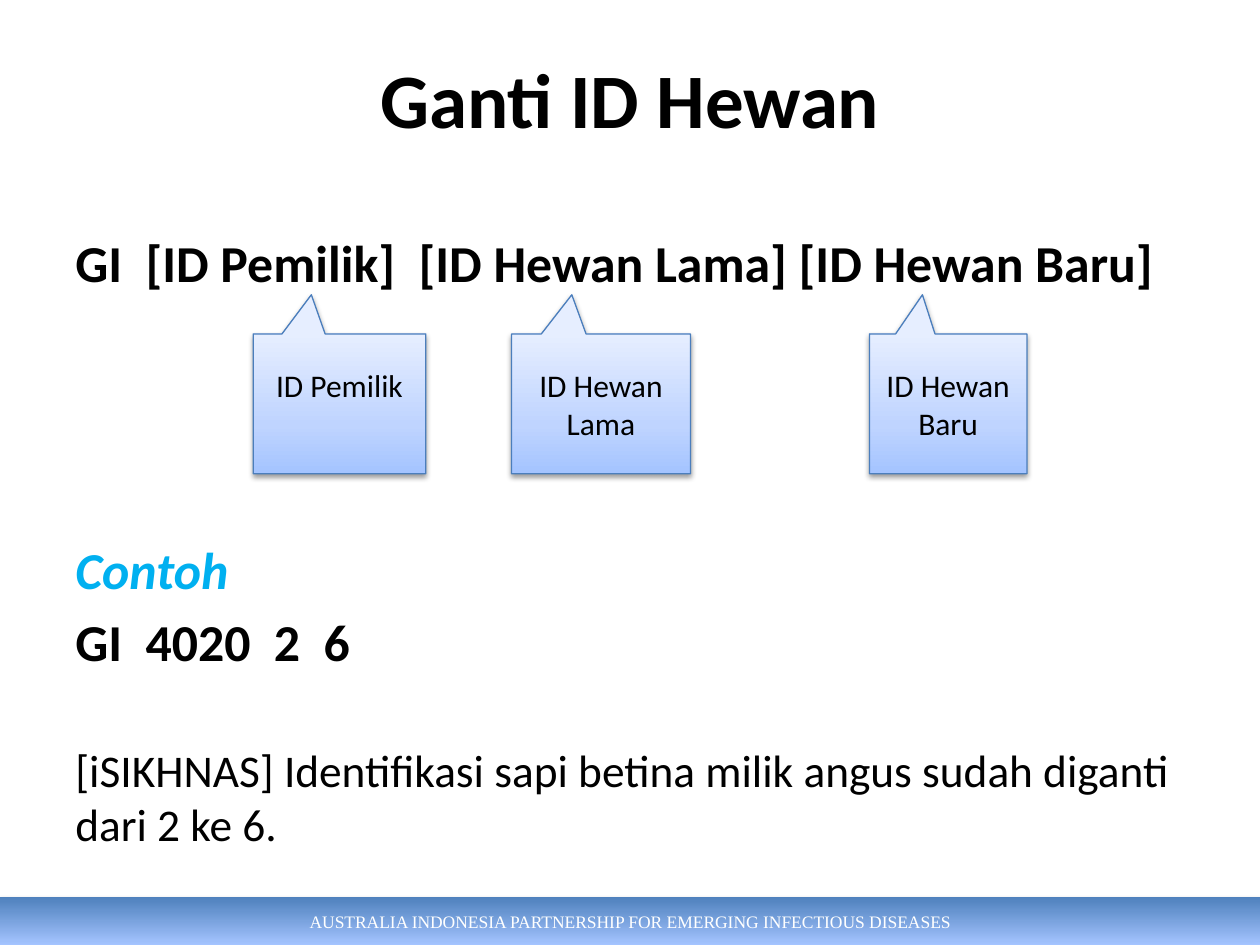
from lxml.etree import SubElement
from pptx import Presentation
from pptx.dml.color import RGBColor
from pptx.enum.shapes import MSO_SHAPE
from pptx.enum.text import MSO_ANCHOR, PP_ALIGN
from pptx.oxml.ns import qn
from pptx.util import Inches, Pt

BLACK = RGBColor(0x00, 0x00, 0x00)
WHITE = RGBColor(0xFF, 0xFF, 0xFF)
CYAN = RGBColor(0x00, 0xB0, 0xF0)
BLUE = RGBColor(0x4F, 0x81, 0xBD)
OUTLINE = RGBColor(0x4B, 0x7E, 0xBC)
LIGHT_BLUE = RGBColor(0xA4, 0xC4, 0xFF)
PALE_BLUE = RGBColor(0xBF, 0xD4, 0xFF)
ICE_BLUE = RGBColor(0xE6, 0xEE, 0xFF)

WIDTH, HEIGHT = 10, 7.5
MARGIN = 0.05 * WIDTH
CONTENT_WIDTH = WIDTH - 2 * MARGIN
FOOTER_HEIGHT = 0.38
CALLOUT_TOP, CALLOUT_HEIGHT = 2.65, 1.11
LINE_OF_LABEL = 0.3

# Label, left, width, lines left free below the label
CALLOUTS = [
    ("ID Pemilik", 2.01, 1.37, 1),
    ("ID Hewan Lama", 4.06, 1.42, 0),
    ("ID Hewan Baru", 6.9, 1.25, 0),
]

# Text, size, colour, bold, italic, space before in points
BODY = [
    ("GI  [ID Pemilik]  [ID Hewan Lama] [ID Hewan Baru]", 29.6, BLACK, True, False, 0),
    ("Contoh", 29.6, CYAN, True, True, 140),
    ("GI  4020  2  6", 29.6, BLACK, True, False, 5.8),
    ("[iSIKHNAS] Identifikasi sapi betina milik angus sudah diganti dari 2 ke 6.",
     25.9, BLACK, False, False, 40),
]


def box(left, top, width, height):
    return [Inches(value) for value in (left, top, width, height)]


def add_run(paragraph, text, size, color, bold=False, italic=False, font="Calibri"):
    run = paragraph.add_run()
    run.text = text
    run.font.name = font
    run.font.size = Pt(size)
    run.font.bold = bold
    run.font.italic = italic
    run.font.color.rgb = color


def set_gradient(shape, stops, angle):
    """Fill with (position, colour) stops; the angle runs counter-clockwise."""
    shape.fill.gradient()
    shape.fill.gradient_angle = angle
    stop_list = shape.element.spPr.find(".//" + qn("a:gsLst"))
    for stop in list(stop_list):
        stop_list.remove(stop)
    for position, color in stops:
        stop = SubElement(stop_list, qn("a:gs"), pos=str(position * 1000))
        SubElement(stop, qn("a:srgbClr"), val=str(color))


def set_shadow(shape, opacity, distance):
    shape.shadow.inherit = False
    effects = shape.element.spPr.find(qn("a:effectLst"))
    shadow = SubElement(effects, qn("a:outerShdw"), blurRad=str(Pt(3.1)),
                        dist=str(Pt(distance)), dir="5400000", rotWithShape="0")
    color = SubElement(shadow, qn("a:srgbClr"), val=str(BLACK))
    SubElement(color, qn("a:alpha"), val=str(opacity * 1000))


def centre_text(shape, text, size, color, bold=False, font="Calibri"):
    frame = shape.text_frame
    frame.word_wrap = True
    frame.vertical_anchor = MSO_ANCHOR.MIDDLE
    paragraph = frame.paragraphs[0]
    paragraph.alignment = PP_ALIGN.CENTER
    add_run(paragraph, text, size, color, bold, font=font)


def add_footer(slide):
    footer = slide.shapes.add_shape(
        MSO_SHAPE.RECTANGLE, *box(0, HEIGHT - FOOTER_HEIGHT, WIDTH, FOOTER_HEIGHT))
    set_gradient(footer, [(0, BLUE), (100, LIGHT_BLUE)], 270)
    footer.line.fill.background()
    set_shadow(footer, 35, 1.8)
    centre_text(footer, "AUSTRALIA INDONESIA PARTNERSHIP FOR EMERGING INFECTIOUS DISEASES",
                10, WHITE, font="Times New Roman")


def format_title(slide):
    title = slide.shapes.title
    title.left, title.top, title.width, title.height = box(MARGIN, 0.3, CONTENT_WIDTH, 0.95)
    centre_text(title, "Ganti ID Hewan", 44, BLACK, bold=True)


def add_body(slide):
    frame = slide.shapes.add_textbox(*box(MARGIN, 1.78, CONTENT_WIDTH, 4.95)).text_frame
    frame.word_wrap = True
    for index, (text, size, color, bold, italic, space) in enumerate(BODY):
        paragraph = frame.add_paragraph() if index else frame.paragraphs[0]
        paragraph.space_before = Pt(space)
        add_run(paragraph, text, size, color, bold, italic)


def add_callout(slide, label, left, width, free_lines):
    callout = slide.shapes.add_shape(
        MSO_SHAPE.RECTANGULAR_CALLOUT, *box(left, CALLOUT_TOP, width, CALLOUT_HEIGHT))
    callout.adjustments[0] = -0.163
    callout.adjustments[1] = -0.78
    set_gradient(callout, [(0, LIGHT_BLUE), (35, PALE_BLUE), (100, ICE_BLUE)], 90)
    callout.line.color.rgb = OUTLINE
    callout.line.width = Pt(0.75)
    set_shadow(callout, 38, 1.6)
    callout.text_frame.margin_bottom = Inches(0.05 + free_lines * LINE_OF_LABEL)
    centre_text(callout, label, 18, BLACK)


def main():
    presentation = Presentation()
    presentation.slide_width = Inches(WIDTH)
    presentation.slide_height = Inches(HEIGHT)
    slide = presentation.slides.add_slide(presentation.slide_layouts[5])

    add_footer(slide)
    format_title(slide)
    add_body(slide)
    for callout in CALLOUTS:
        add_callout(slide, *callout)

    presentation.save("out.pptx")


if __name__ == "__main__":
    main()
